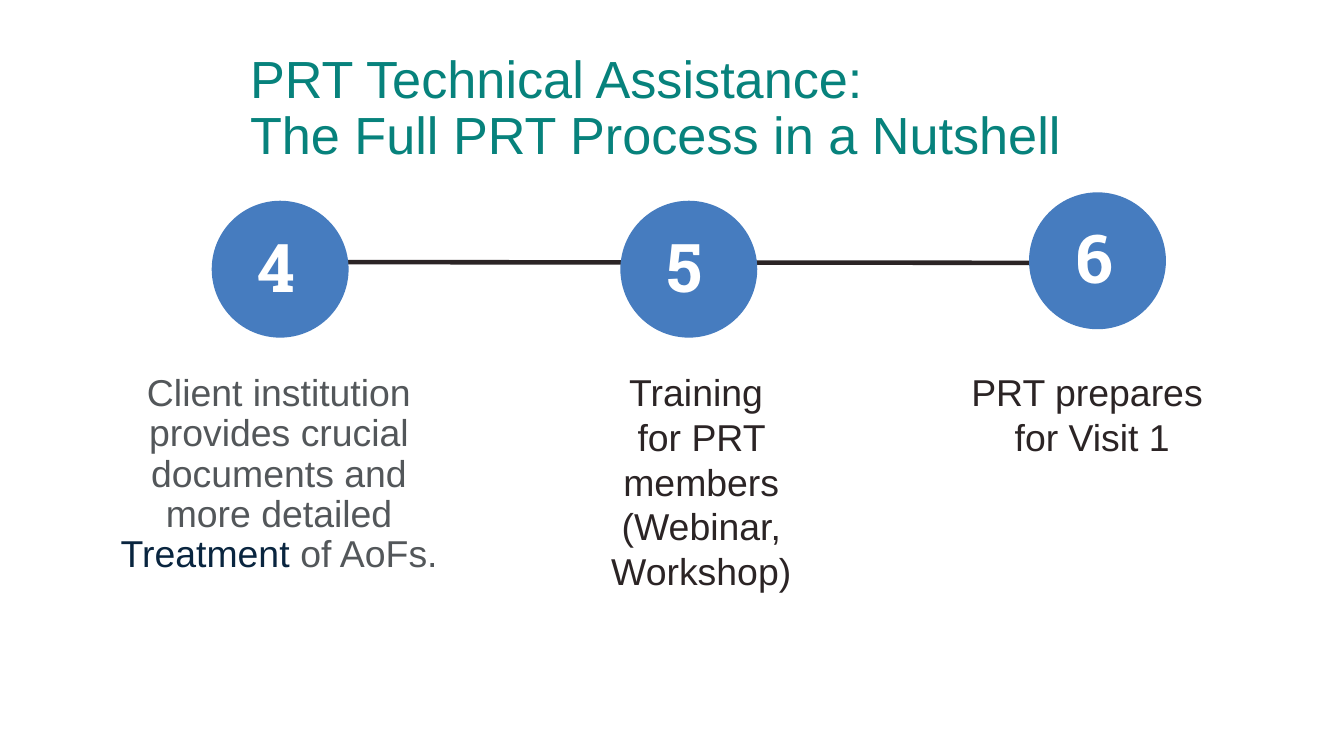
"""Build a slide showing steps 4 to 6 of the PRT process."""
import pptx
import pptx.dml.color
import pptx.enum.shapes
import pptx.enum.text
import pptx.util
from dataclasses import dataclass


@dataclass(frozen=True)
class Theme:
    teal: str = "07827C"
    blue: str = "467CBF"
    ink: str = "2B2425"
    gray: str = "53575A"
    navy: str = "09253F"
    white: str = "FFFFFF"
    body_font: str = "Arial"
    number_font: str = "Roboto Slab"
    title_size: float = 37.3
    number_size: float = 48
    body_size: float = 26.7
    line_width: float = 3.25


theme = Theme()
color = pptx.dml.color.RGBColor.from_string
center = pptx.enum.text.PP_ALIGN.CENTER

deck = pptx.Presentation()
deck.slide_width = pptx.util.Inches(13.33)
deck.slide_height = pptx.util.Inches(7.5)
page = deck.slides.add_slide(deck.slide_layouts[6])


def grid(left, top, width, height):
    """Turn cells of a 160 by 90 grid into slide lengths."""
    column, row = deck.slide_width / 160, deck.slide_height / 90
    return int(left * column), int(top * row), int(width * column), int(height * row)


def add_text(pieces, area, size, font=theme.body_font, bold=False,
             align=None, spacing=None, inset=(0.13, 0.07)):
    """Add a text box made of (text, colour) pieces."""
    box = page.shapes.add_textbox(*grid(*area))
    frame = box.text_frame
    frame.word_wrap = True
    frame.margin_left = frame.margin_right = pptx.util.Inches(inset[0])
    frame.margin_top = frame.margin_bottom = pptx.util.Inches(inset[1])
    para = frame.paragraphs[0]
    para.alignment = align
    para.line_spacing = spacing
    para.font.size = pptx.util.Pt(size)
    for text, tint in pieces:
        for index, line in enumerate(text.split("\n")):
            if index:
                para.add_line_break()
            span = para.add_run()
            span.text = line
            span.font.name = font
            span.font.size = pptx.util.Pt(size)
            span.font.bold = bold
            span.font.color.rgb = color(tint)


add_text([("PRT Technical Assistance: \nThe Full PRT Process in a Nutshell", theme.teal)],
         (28.2, 4.8, 131.8, 17.4), theme.title_size, spacing=0.9, inset=(0.13, 0.13))

start_x, start_y, end_x, end_y = grid(38.4, 31.2, 130.1, 31.3)
timeline = page.shapes.add_connector(
    pptx.enum.shapes.MSO_CONNECTOR.STRAIGHT, start_x, start_y, end_x, end_y)
timeline.line.color.rgb = color(theme.ink)
timeline.line.width = pptx.util.Pt(theme.line_width)
timeline._element.spPr.append(pptx.oxml.parse_xml(
    '<a:effectLst xmlns:a="http://schemas.openxmlformats.org/drawingml/2006/main"/>'))

steps = [
    ("4", 23.9, (11.4, 43.7, 43.7, 44.3), 0.9,
     [("Client institution provides crucial documents and more detailed ", theme.gray),
      ("Treatment", theme.navy), (" of AoFs.", theme.gray)]),
    ("5", 23.9, (68.2, 43.1, 30.6, 40.8), None,
     [("Training \nfor PRT members (Webinar, Workshop)", theme.ink)]),
    ("6", 22.9, (108.2, 43.1, 43.7, 28.9), None,
     [("PRT prepares \nfor Visit 1", theme.ink)]),
]
first_left, step_pitch, diameter = 25.2, 48.65, 16.3

for index, (number, top, area, spacing, pieces) in enumerate(steps):
    left = first_left + index * step_pitch
    circle = page.shapes.add_shape(
        pptx.enum.shapes.MSO_SHAPE.OVAL, *grid(left, top, diameter, diameter))
    circle.shadow.inherit = False
    circle.fill.solid()
    circle.fill.fore_color.rgb = color(theme.blue)
    circle.line.fill.background()
    add_text([(number, theme.white)], (left + 4.3, top + 2.3, 9.4, 10.9),
             theme.number_size, font=theme.number_font, bold=True, inset=(0.1, 0.05))
    add_text(pieces, area, theme.body_size, align=center, spacing=spacing)

deck.save("out.pptx")
